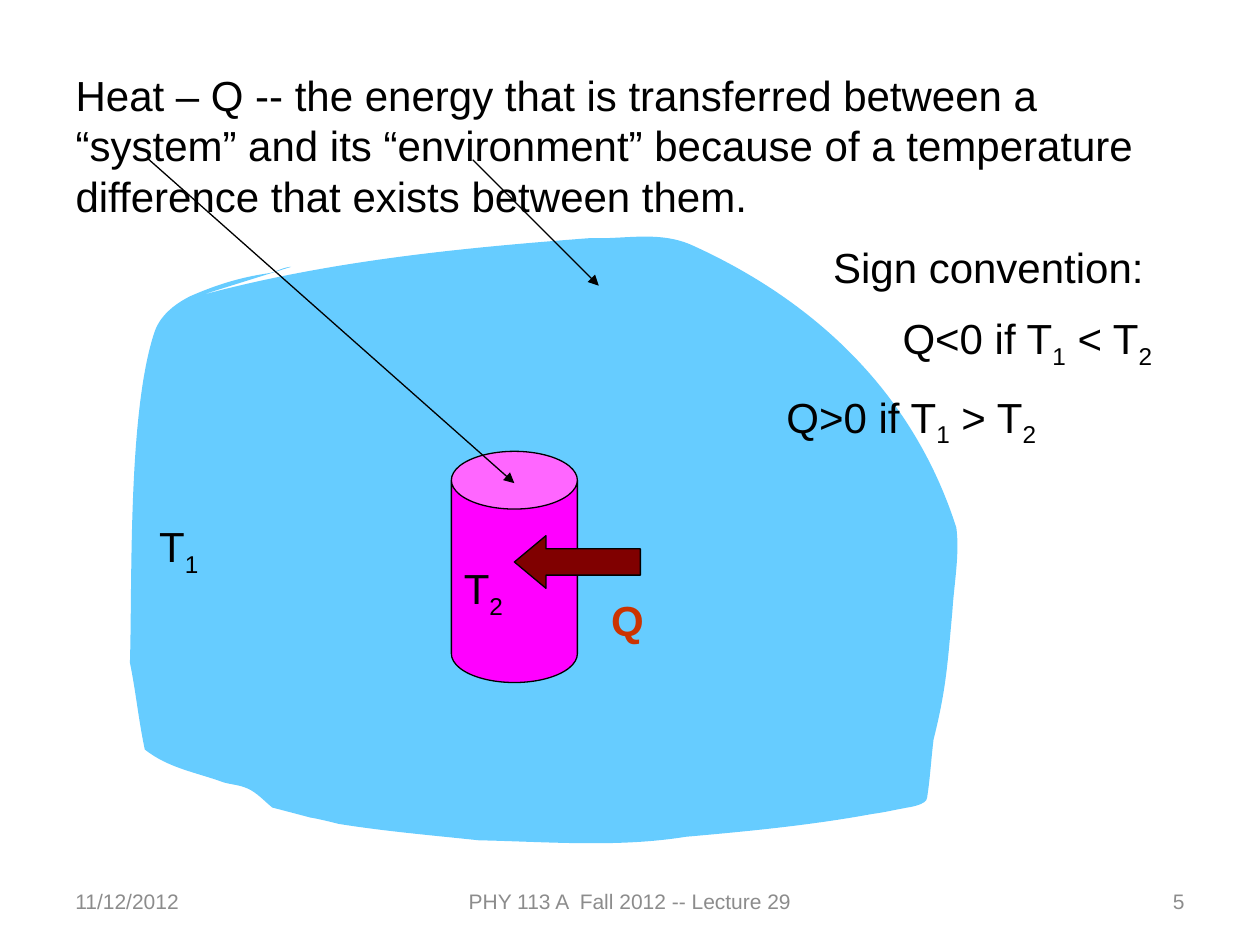
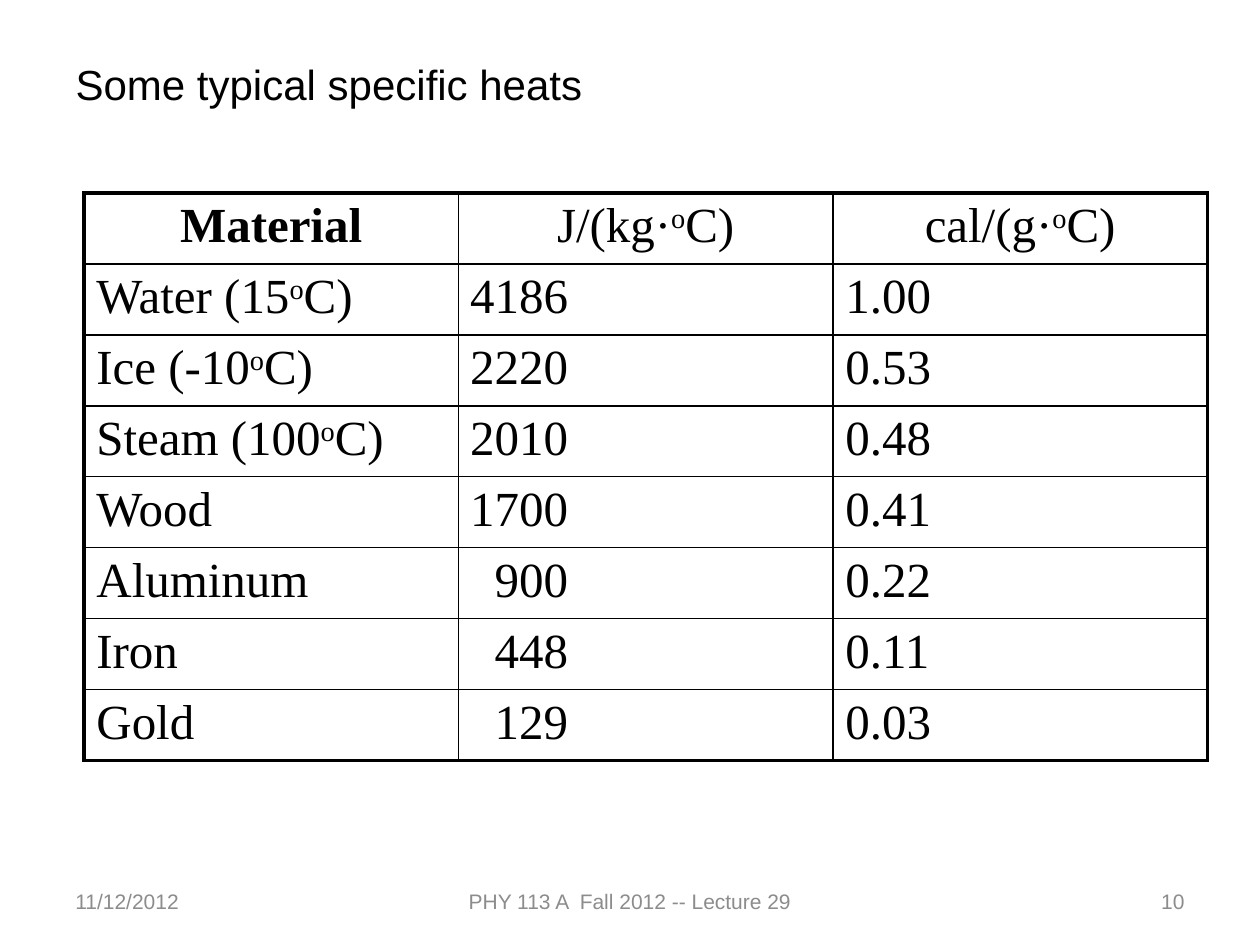
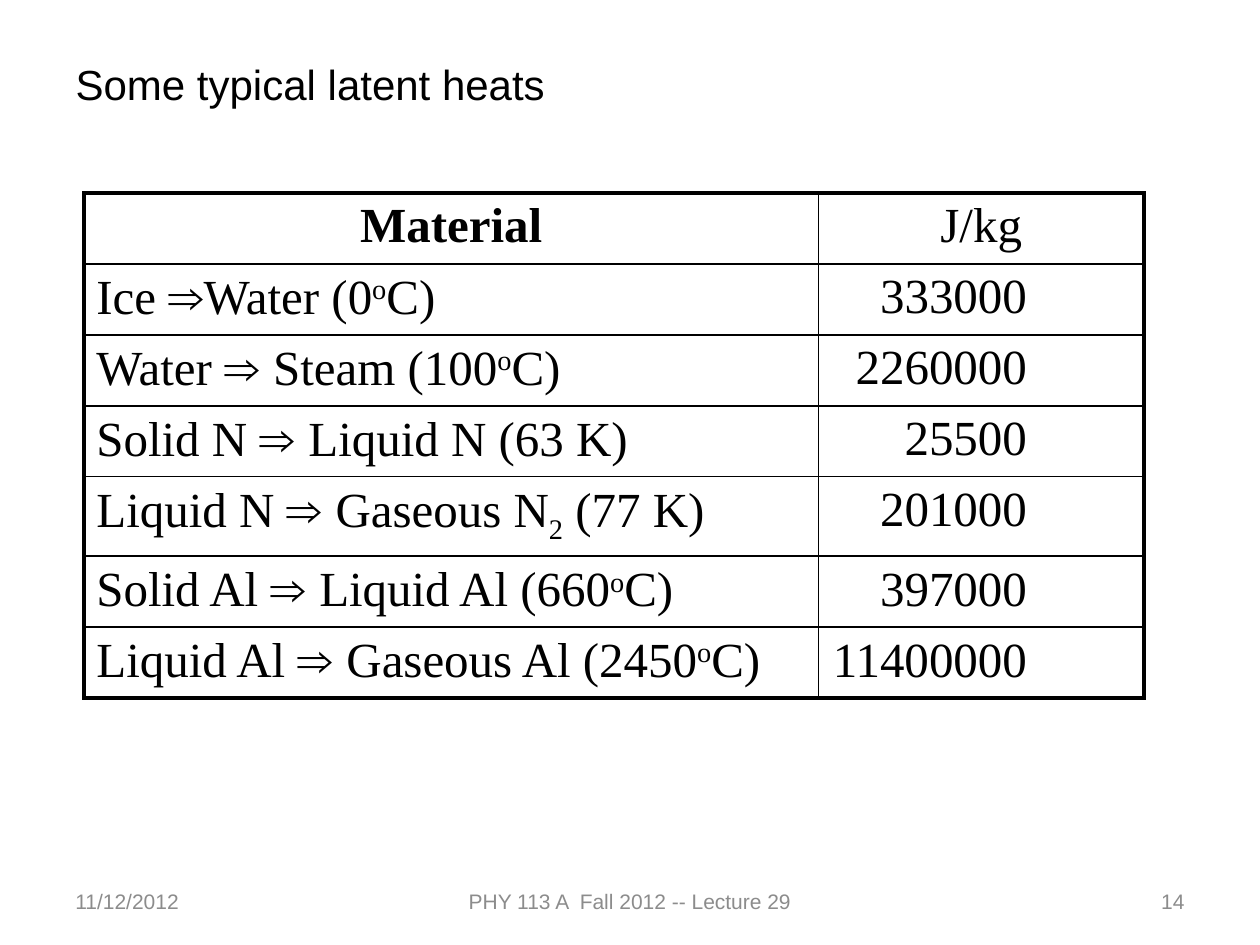
"""Build three lecture slides on heat, specific heats and latent heats."""
from dataclasses import dataclass, replace
from typing import Any, NamedTuple

from lxml.etree import SubElement
from pptx import Presentation
from pptx.dml.color import RGBColor
from pptx.enum.shapes import MSO_CONNECTOR, MSO_SHAPE
from pptx.enum.text import MSO_ANCHOR, MSO_AUTO_SIZE, PP_ALIGN
from pptx.oxml import parse_xml
from pptx.oxml.ns import nsdecls, qn
from pptx.util import Cm, Pt

BLACK = RGBColor(0x00, 0x00, 0x00)
GRAY = RGBColor(0x8C, 0x8C, 0x8C)
SKY = RGBColor(0x66, 0xCC, 0xFF)
MAGENTA = RGBColor(0xFF, 0x00, 0xFF)
MAROON = RGBColor(0x80, 0x00, 0x00)
RUST = RGBColor(0xCC, 0x33, 0x00)

TITLE_ONLY = 5
BASELINES = {"^": "30000", "_": "-25000"}
THICK, THIN = Pt(2.25), Pt(1)


class Box(NamedTuple):
    """Left, top, width and height in centimetres."""

    left: float
    top: float
    width: float
    height: float

    def lengths(self) -> list[Cm]:
        """Return the four lengths for python-pptx."""
        return [Cm(value) for value in self]


@dataclass(frozen=True)
class Style:
    """Look of a paragraph."""

    font: str = "Arial"
    size: float = 24
    color: RGBColor = BLACK
    bold: bool = False
    align: PP_ALIGN = PP_ALIGN.LEFT


@dataclass(frozen=True)
class Label:
    """A one-line text box."""

    text: str
    box: Box
    style: Style = Style()
    anchor: MSO_ANCHOR = MSO_ANCHOR.TOP


@dataclass(frozen=True)
class Solid:
    """A filled preset shape with a thin black outline."""

    preset: MSO_SHAPE
    box: Box
    fill: RGBColor
    adjustments: tuple[float, ...]


@dataclass(frozen=True)
class Pointer:
    """A thin arrow between two points in centimetres."""

    start: tuple[float, float]
    end: tuple[float, float]


@dataclass(frozen=True)
class HeatTable:
    """A titled table slide; figures in column two end at a common right edge."""

    title: str
    number: int
    widths: tuple[float, ...]
    figure_margin: float
    rows: tuple[tuple[str, ...], ...]


FOOTER = Style(size=12, color=GRAY)
CELL = Style(font="Times New Roman", size=28)
DEFINITION_BOX = Box(1.27, 1.27, 22.43, 7.95)
TABLE_TITLE = Box(1.27, 1.05, 20.12, 1.27)
TABLE_LEFT, TABLE_TOP = 1.69, 3.89
ROW_HEIGHT, SUBSCRIPT_ROW_HEIGHT = 1.43, 1.6

DEFINITION = (
    "Heat – Q -- the energy that is transferred between a “system” and its "
    "“environment” because of a temperature difference that exists between them."
)
SIGN_LINES = (
    ("Sign convention:", 15.27),
    ("Q<0 if T|_1| < T|_2", 16.67),
    ("Q>0 if T|_1| > T|_2", 14.33),
)

ENVIRONMENT_START = (3.99, 5.97)
ENVIRONMENT_CURVES = (
    ((6.6, 5.26), (9.27, 5), (11.91, 4.8)),
    ((12.57, 4.83), (13.26, 4.65), (13.92, 4.93)),
    ((15.95, 5.84), (18.29, 7.54), (19.28, 10.64)),
    ((19.35, 11.18), (19.23, 11.79), (19.2, 12.32)),
    ((19.1, 13.39), (19.08, 13.87), (18.82, 14.91)),
    ((18.77, 15.32), (18.75, 15.7), (18.69, 16.08)),
    ((18.69, 16.23), (18.29, 16.28), (18.29, 16.28)),
    ((18.03, 16.33), (17.81, 16.38), (17.58, 16.41)),
    ((16.33, 16.64), (15.06, 16.76), (13.82, 16.87)),
    ((12.45, 17.09), (11.05, 16.97), (9.65, 16.94)),
    ((8.71, 16.84), (7.77, 16.76), (6.83, 16.61)),
    ((6.63, 16.56), (6.43, 16.51), (6.25, 16.48)),
    ((5.99, 16.41), (5.49, 16.28), (5.49, 16.28)),
    ((5.33, 16.15), (5.18, 15.98), (5, 15.9)),
    ((4.83, 15.82), (4.67, 15.82), (4.5, 15.77)),
    ((3.96, 15.57), (3.4, 15.49), (2.92, 15.11)),
    ((2.79, 14.5), (2.74, 13.94), (2.62, 13.36)),
    ((2.67, 11.76), (2.57, 8.31), (3.12, 6.68)),
    ((3.25, 6.32), (3.58, 6.1), (3.84, 5.97)),
    ((4.37, 5.74), (4.85, 5.59), (5.41, 5.51)),
    ((5.56, 5.49), (5.72, 5.38), (5.87, 5.38)),
)

SYSTEM = Solid(MSO_SHAPE.CAN, Box(9.1, 9.1, 2.54, 4.66), MAGENTA, (0.458,))
HEAT_FLOW = Solid(MSO_SHAPE.LEFT_ARROW, Box(10.37, 10.8, 2.54, 1.06), MAROON, (0.5, 0.6))
TEMPERATURES = (
    Label("T|_1", Box(2.96, 10.37, 2.75, 1.27)),
    Label("T|_2", Box(9.1, 11.22, 2.75, 1.27)),
)
HEAT = Label("Q", Box(12.07, 11.85, 1.69, 1.27), Style(color=RUST, bold=True))
POINTERS = (
    Pointer((2.96, 3.18), (10.37, 9.74)),
    Pointer((9.53, 3.22), (12.07, 5.76)),
)

TABLES = (
    HeatTable(
        "Some typical specific heats", 10, (7.55, 7.55, 7.55), 5.34,
        (
            ("Material", "J/(kg·|^o|C)", "cal/(g·|^o|C)"),
            ("Water (15|^o|C)", "4186", "1.00"),
            ("Ice (-10|^o|C)", "2220", "0.53"),
            ("Steam (100|^o|C)", "2010", "0.48"),
            ("Wood", "1700", "0.41"),
            ("Aluminum", "900", "0.22"),
            ("Iron", "448", "0.11"),
            ("Gold", "129", "0.03"),
        ),
    ),
    HeatTable(
        "Some typical latent heats", 14, (14.81, 6.56), 2.36,
        (
            ("Material", "J/kg"),
            ("Ice |⇒|Water (0|^o|C)", "333000"),
            ("Water |⇒ |Steam (100|^o|C)", "2260000"),
            ("Solid N |⇒ |Liquid N (63 K)", "25500"),
            ("Liquid N |⇒ |Gaseous N|_2| (77 K)", "201000"),
            ("Solid Al |⇒ |Liquid Al (660|^o|C)", "397000"),
            ("Liquid Al |⇒ |Gaseous Al (2450|^o|C)", "11400000"),
        ),
    ),
)


def apply(target: Any, formats: dict[str, Any]) -> None:
    """Set each named attribute on the target."""
    for name, value in formats.items():
        setattr(target, name, value)


def write(paragraph: Any, text: str, style: Style) -> None:
    """Write runs split at bars; ^ raises and _ lowers a run."""
    paragraph.alignment = style.align
    for piece in text.split("|"):
        run = paragraph.add_run()
        run.text = piece.lstrip("^_")
        font_name = "Arial" if piece.startswith("⇒") else style.font
        apply(run.font, {"name": font_name, "size": Pt(style.size), "bold": style.bold})
        run.font.color.rgb = style.color
        if piece[0] in BASELINES:
            run._r.get_or_add_rPr().set("baseline", BASELINES[piece[0]])


def place(shape: Any, box: Box, anchor: MSO_ANCHOR = MSO_ANCHOR.TOP) -> Any:
    """Move a text shape and return its prepared text frame."""
    apply(shape, dict(zip(box._fields, box.lengths())))
    apply(shape.text_frame, {
        "word_wrap": True, "auto_size": MSO_AUTO_SIZE.NONE, "vertical_anchor": anchor,
    })
    return shape.text_frame


def add_label(slide: Any, label: Label) -> None:
    """Add a text box."""
    frame = place(slide.shapes.add_textbox(*label.box.lengths()), label.box, label.anchor)
    write(frame.paragraphs[0], label.text, label.style)


def raise_title(slide: Any) -> None:
    """Bring the title in front of everything drawn so far."""
    title = slide.shapes.title.element
    title.getparent().append(title)


def add_titled_slide(deck: Any, title: str, box: Box, number: int) -> Any:
    """Add a slide with its title and footer."""
    slide = deck.slides.add_slide(deck.slide_layouts[TITLE_ONLY])
    write(place(slide.shapes.title, box).paragraphs[0], title, Style())
    for text, left, width, align in (
        ("11/12/2012", 1.27, 5.93, PP_ALIGN.LEFT),
        ("PHY 113 A  Fall 2012 -- Lecture 29", 8.68, 8.04, PP_ALIGN.CENTER),
        (str(number), 18.2, 5.93, PP_ALIGN.RIGHT),
    ):
        add_label(slide, Label(text, Box(left, 17.66, width, 1.01),
                               replace(FOOTER, align=align), MSO_ANCHOR.MIDDLE))
    raise_title(slide)
    return slide


def add_environment(slide: Any) -> None:
    """Draw the blue surroundings as a chain of cubic curves."""
    builder = slide.shapes.build_freeform(*(Cm(value) for value in ENVIRONMENT_START))
    corners = [(Cm(x), Cm(y)) for curve in ENVIRONMENT_CURVES for x, y in curve]
    builder.add_line_segments(corners, close=False)
    environment = builder.convert_to_shape()
    environment.shadow.inherit = False
    environment.fill.solid()
    environment.fill.fore_color.rgb = SKY
    environment.line.fill.background()
    outline = next(environment.element.iter(qn("a:path")))
    segments = outline.findall(qn("a:lnTo"))
    for first in range(0, len(segments), 3):
        curve = SubElement(outline, qn("a:cubicBezTo"))
        for segment in segments[first:first + 3]:
            curve.append(segment[0])
            outline.remove(segment)


def add_solid(slide: Any, solid: Solid) -> None:
    """Draw a preset shape."""
    shape = slide.shapes.add_shape(solid.preset, *solid.box.lengths())
    shape.shadow.inherit = False
    for index, value in enumerate(solid.adjustments):
        shape.adjustments[index] = value
    shape.fill.solid()
    shape.fill.fore_color.rgb = solid.fill
    shape.line.color.rgb = BLACK
    shape.line.width = Pt(0.75)


def add_pointer(slide: Any, pointer: Pointer) -> None:
    """Draw an arrow with a triangular head."""
    ends = [Cm(value) for value in pointer.start + pointer.end]
    arrow = slide.shapes.add_connector(MSO_CONNECTOR.STRAIGHT, *ends)
    arrow.line.color.rgb = BLACK
    arrow.line.width = Pt(0.75)
    SubElement(arrow.line._get_or_add_ln(), qn("a:tailEnd"), type="triangle")
    SubElement(arrow.element.spPr, qn("a:effectLst"))


def write_sign_convention(frame: Any) -> None:
    """Write the indented lines on the sign of Q below the definition."""
    for text, indent in SIGN_LINES:
        paragraph = frame.add_paragraph()
        write(paragraph, text, Style())
        paragraph.space_before = Pt(12)
        properties = paragraph._p.get_or_add_pPr()
        properties.set("marL", str(Cm(indent)))
        properties.set("indent", "0")


def add_heat_slide(deck: Any) -> None:
    """Build the definition of heat."""
    slide = add_titled_slide(deck, DEFINITION, DEFINITION_BOX, 5)
    write_sign_convention(slide.shapes.title.text_frame)
    add_environment(slide)
    add_solid(slide, SYSTEM)
    for temperature in TEMPERATURES:
        add_label(slide, temperature)
    add_solid(slide, HEAT_FLOW)
    add_label(slide, HEAT)
    raise_title(slide)
    for pointer in POINTERS:
        add_pointer(slide, pointer)


def set_borders(cell: Any, outer: dict[str, bool]) -> None:
    """Give a cell thick lines on outer sides and thin ones inside."""
    properties = cell._tc.get_or_add_tcPr()
    for index, (side, is_outer) in enumerate(outer.items()):
        width = THICK if is_outer else THIN
        properties.insert(index, parse_xml(
            f'<a:ln{side} {nsdecls("a")} w="{width}"><a:solidFill>'
            f'<a:srgbClr val="{BLACK}"/></a:solidFill></a:ln{side}>'
        ))


def add_table_slide(deck: Any, heats: HeatTable) -> None:
    """Build a slide with a ruled table."""
    slide = add_titled_slide(deck, heats.title, TABLE_TITLE, heats.number)
    heights = [SUBSCRIPT_ROW_HEIGHT if "_" in row[0] else ROW_HEIGHT for row in heats.rows]
    row_count, column_count = len(heights), len(heats.widths)
    box = Box(TABLE_LEFT, TABLE_TOP, sum(heats.widths), sum(heights))
    table = slide.shapes.add_table(row_count, column_count, *box.lengths()).table
    apply(table, {"first_row": False, "horz_banding": False})
    for column, width in zip(table.columns, heats.widths):
        column.width = Cm(width)
    for r, row in enumerate(heats.rows):
        table.rows[r].height = Cm(heights[r])
        for c, text in enumerate(row):
            cell = table.cell(r, c)
            align = PP_ALIGN.LEFT
            if r == 0:
                align = PP_ALIGN.CENTER
            elif c == 1:
                align = PP_ALIGN.RIGHT
                apply(cell, {"margin_left": Cm(0), "margin_right": Cm(heats.figure_margin)})
            style = replace(CELL, bold=r == c == 0, align=align)
            write(cell.text_frame.paragraphs[0], text, style)
            cell.fill.background()
            set_borders(cell, {
                "L": c == 0, "R": c == column_count - 1,
                "T": r == 0, "B": r == row_count - 1,
            })


def main() -> None:
    """Build and save the deck."""
    deck = Presentation()
    apply(deck, {"slide_width": Cm(25.4), "slide_height": Cm(19.05)})
    add_heat_slide(deck)
    for heats in TABLES:
        add_table_slide(deck, heats)
    deck.save("out.pptx")


if __name__ == "__main__":
    main()
